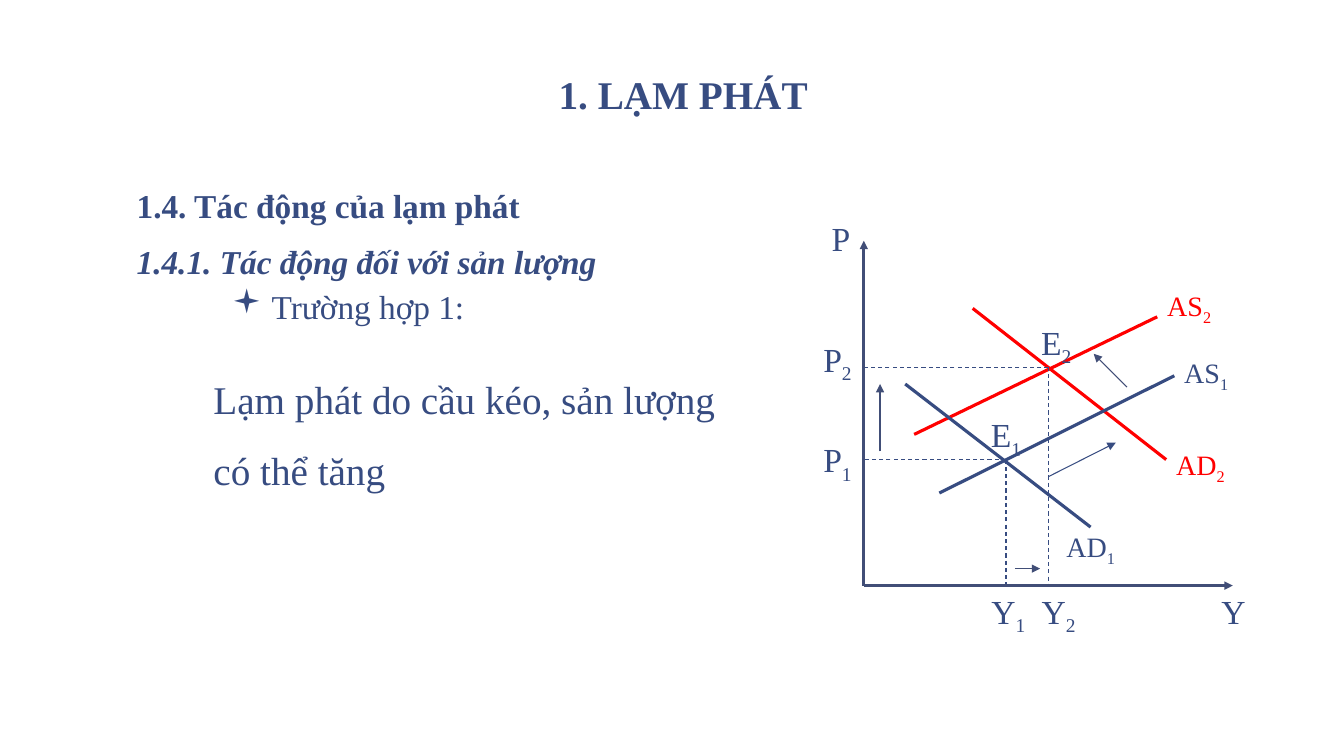
from lxml import etree
from pptx import Presentation
from pptx.dml.color import RGBColor
from pptx.enum.dml import MSO_LINE
from pptx.enum.shapes import MSO_CONNECTOR
from pptx.enum.text import MSO_ANCHOR, PP_ALIGN
from pptx.oxml.ns import qn
from pptx.util import Pt

STRAIGHT = MSO_CONNECTOR.STRAIGHT
DASH = MSO_LINE.DASH
TOP, BOTTOM = MSO_ANCHOR.TOP, MSO_ANCHOR.BOTTOM
LEFT, CENTER = PP_ALIGN.LEFT, PP_ALIGN.CENTER
NAVY, SLATE, RED = "374C81", "414E77", "FF0000"
FONT = "Times New Roman"


def color(code):
    return RGBColor.from_string(code)


def write(par, text, size=24, ink=NAVY, bold=False, italic=False, base=0):
    run = par.add_run()
    run.text = text
    font = run.font
    font.name, font.size = FONT, Pt(size)
    font.bold, font.italic = bold, italic
    font.color.rgb = color(ink)
    if base:
        run._r.get_or_add_rPr().set("baseline", str(base * 1000))


class Board:
    def __init__(self, slide):
        self.slide = slide

    def box(self, x, y, w, h, pad=(7.2, 3.6), anchor=TOP):
        frame = self.slide.shapes.add_textbox(Pt(x), Pt(y), Pt(w), Pt(h)).text_frame
        frame.word_wrap = True
        frame.vertical_anchor = anchor
        frame.margin_left = frame.margin_right = Pt(pad[0])
        frame.margin_top = frame.margin_bottom = Pt(pad[1])
        return frame

    def para(self, frame, text, first=True, space=1, before=0, align=LEFT,
             bullet=None, **style):
        par = frame.paragraphs[0] if first else frame.add_paragraph()
        par.line_spacing, par.alignment = space, align
        par.space_before = Pt(before)
        if bullet:
            props = par._p.get_or_add_pPr()
            props.set("marL", str(Pt(96.5)))
            props.set("indent", str(-Pt(28.5)))
            etree.SubElement(props, qn("a:buFont"), typeface="Wingdings")
            etree.SubElement(props, qn("a:buChar"), char=bullet)
        write(par, text, **style)

    def label(self, x, y, text, sub="", size=24, ink=NAVY):
        par = self.box(x, y, 54, size * 1.5).paragraphs[0]
        write(par, text, size=size, ink=ink)
        if sub:
            write(par, sub, size=size, ink=ink, base=-25)

    def line(self, x1, y1, x2, y2, ink=NAVY, width=0.75, dash=False, arrow=False):
        link = self.slide.shapes.add_connector(STRAIGHT, Pt(x1), Pt(y1), Pt(x2), Pt(y2))
        link.line.color.rgb = color(ink)
        link.line.width = Pt(width)
        if dash:
            link.line.dash_style = DASH
        if arrow:
            etree.SubElement(link.line._get_or_add_ln(), qn("a:tailEnd"), type="triangle")
        etree.SubElement(link._element.spPr, qn("a:effectLst"))


def main():
    deck = Presentation()
    deck.slide_width, deck.slide_height = Pt(960), Pt(540)
    board = Board(deck.slides.add_slide(deck.slide_layouts[6]))

    # Title
    title = board.box(88, 6, 800, 82.5, pad=(9.6, 4.8), anchor=BOTTOM)
    board.para(title, "1. LẠM PHÁT", space=0.85, align=CENTER, size=28, bold=True)

    # Headings and case
    body = board.box(88, 134, 480, 142, pad=(9.6, 4.8))
    board.para(body, "1.4. Tác động của lạm phát", space=0.75, size=23.8, bold=True)
    board.para(body, "1.4.1. Tác động đối với sản lượng", first=False, space=0.75,
               before=18.7, size=23.8, bold=True, italic=True)
    board.para(body, "Trường hợp 1:", first=False, space=0.75, before=10.7,
               bullet="▪", size=23.8)
    note = board.box(145.4, 247.7, 397, 103)
    board.para(note, "Lạm phát do cầu kéo, sản lượng có thể tăng", space=1.5, size=28)

    # Supply and demand curves
    for ink, *ends in [(RED, 653, 310.3, 826.6, 226.3), (RED, 694.8, 220.3, 833, 328.3),
                       (NAVY, 646.6, 274.3, 779, 376.5), (NAVY, 671, 352.2, 838.8, 268.4)]:
        board.line(*ends, ink=ink, width=2.25)

    # Dashed guides from each balance point to the axes
    left, floor = 617, 418.3
    for x, y in [(718.6, 328.3), (748.8, 262.2)]:
        board.line(x, y, x, floor, dash=True)
        board.line(x, y, left, y, dash=True)

    # Shift arrows
    for ink, *ends in [(SLATE, 628.6, 322.4, 628.6, 274.3), (NAVY, 748.8, 340.5, 797, 316.2),
                       (SLATE, 805, 276.5, 781.2, 252.7), (SLATE, 725, 406.2, 743, 406.2)]:
        board.line(*ends, ink=ink, arrow=True)

    # Axes
    for x, y in [(left, 172), (880.6, floor)]:
        board.line(left, floor, x, y, ink=SLATE, width=2, arrow=True)

    # Point and axis labels
    for x, y, text, sub in [(587, 152, "P", ""), (581, 238.3, "P", "2"), (581, 310.3, "P", "1"),
                            (701, floor, "Y", "1"), (737, floor, "Y", "2"),
                            (865.4, floor, "Y", ""),
                            (700.6, 292.3, "E", "1"), (736.6, 226.3, "E", "2")]:
        board.label(x, y, text, sub)

    # Curve labels
    for x, y, text, sub, ink in [(838.8, 250.4, "AS", "1", NAVY), (826.6, 202.4, "AS", "2", RED),
                                 (754.6, 375, "AD", "1", NAVY), (833, 316.2, "AD", "2", RED)]:
        board.label(x, y, text, sub, size=20, ink=ink)

    deck.save("out.pptx")


if __name__ == "__main__":
    main()
